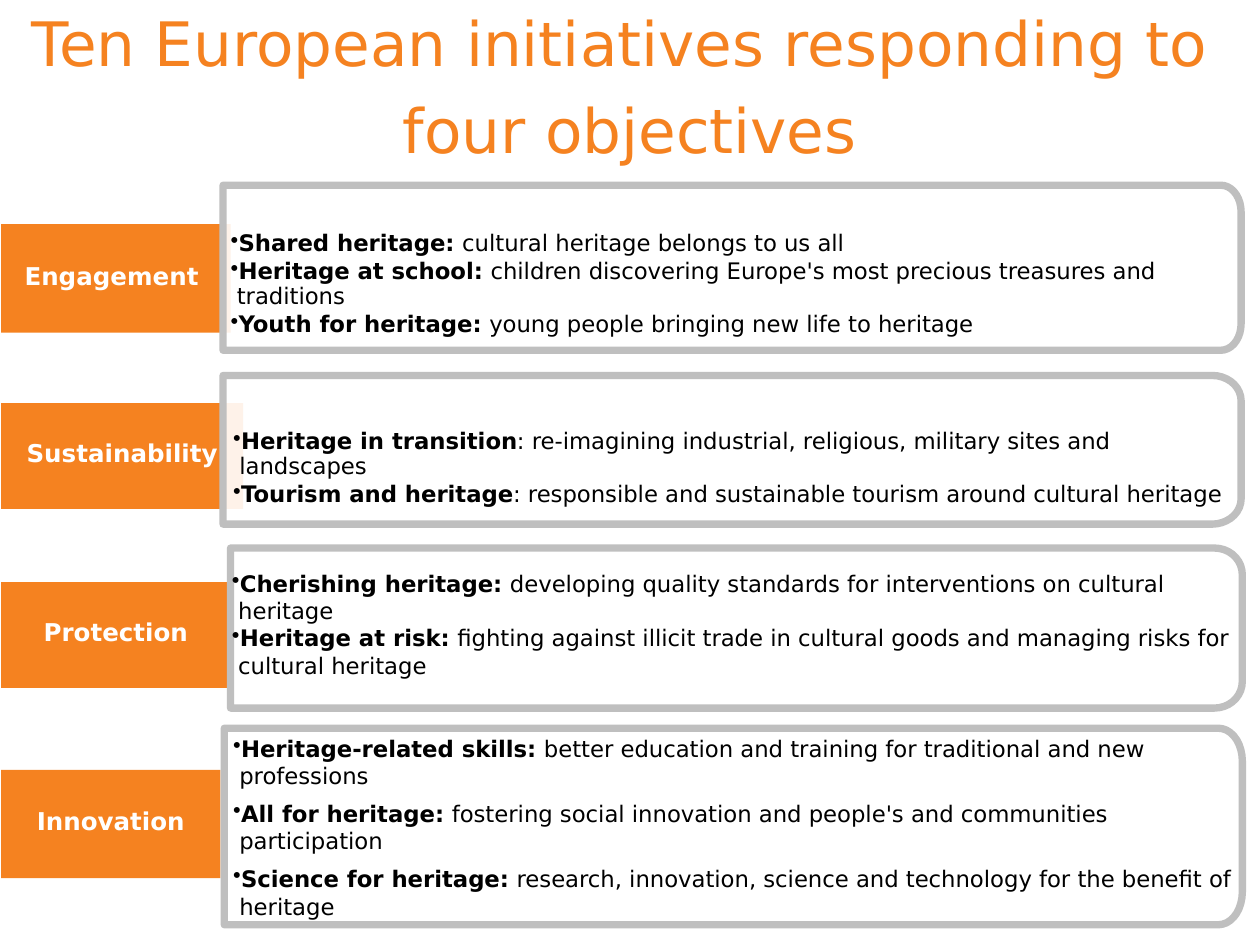
import math
from lxml import etree
from pptx import Presentation
from pptx import util as u
from pptx.dml.color import RGBColor
from pptx.enum import shapes, text
from pptx.oxml.ns import qn

COLORS = {"orange": "F58220", "grey": "BFBFBF", "white": "FFFFFF", "black": "000000"}
FONT = "DejaVu Sans"
COLS, ROWS = 100, 75

TITLE = ["Ten European initiatives responding to ", "four objectives"]

# Boxes are (left, top, width, height) in grid cells; insets are (side, top) in cells
OBJECTIVES = [
    dict(name="Engagement ", tag=(0.1, 17.8, 18.2, 8.6),
         panel=(17.7, 14.7, 80.8, 13.1), corner=(1.6, 2.1),
         body=(17.7, 13.1, 80.7, 16.2), inset=(0.6, 3.4), line=0.9, gap=2, middle=True,
         initiatives=[
             ("Shared heritage: ", "cultural heritage belongs to us all"),
             ("Heritage at school: ", "children discovering Europe's most precious "
              "treasures and traditions"),
             ("Youth for heritage: ", "young people bringing new life to heritage")]),
    dict(name="Sustainability", tag=(0.1, 32, 19.2, 8.4),
         panel=(17.7, 29.8, 80.8, 11.8), corner=(2.3, 2),
         body=(17.7, 28.6, 80.7, 14.2), inset=(0.8, 3.8), line=0.9, gap=2, middle=True,
         initiatives=[
             ("Heritage in transition", ": re-imagining industrial, religious, "
              "military sites and landscapes"),
             ("Tourism and heritage", ": responsible and sustainable tourism "
              "around cultural heritage")]),
    dict(name="Protection", tag=(0.1, 46.2, 18.2, 8.4),
         panel=(18.3, 43.5, 80.3, 12.7), corner=(2.2, 2.1),
         body=(17.9, 44.7, 80.9, 9.9), inset=(0.5, 0.5), line=1, gap=0, middle=False,
         initiatives=[
             ("Cherishing heritage: ", "developing quality standards for "
              "interventions on cultural heritage"),
             ("Heritage at risk: ", "fighting against illicit trade in cultural "
              "goods and managing risks for cultural heritage")]),
    dict(name="Innovation", tag=(0.1, 61.1, 17.4, 8.6),
         panel=(17.8, 57.8, 80.8, 15.6), corner=(1.9, 2.6),
         body=(17.8, 57.5, 80.7, 16.3), inset=(0.7, 0.7), line=1, gap=6, middle=True,
         initiatives=[
             ("Heritage-related skills: ", "better education and training for "
              "traditional and new professions"),
             ("All for heritage: ", "fostering social innovation and people's and "
              "communities participation"),
             ("Science for heritage: ", "research, innovation, science and "
              "technology for the benefit of heritage")]),
]


class Deck:
    def __init__(self):
        self.prs = Presentation()
        self.prs.slide_width, self.prs.slide_height = u.Inches(10), u.Inches(7.5)
        self.slide = self.prs.slides.add_slide(self.prs.slide_layouts[5])

    def x(self, cols):
        return round(self.prs.slide_width * cols / COLS)

    def y(self, rows):
        return round(self.prs.slide_height * rows / ROWS)

    def place(self, box):
        left, top, width, height = box
        return self.x(left), self.y(top), self.x(width), self.y(height)

    def frame(self, shape, side=0, top=0, bottom=0, middle=False):
        frame = shape.text_frame
        frame.word_wrap = True
        frame.auto_size = text.MSO_AUTO_SIZE.NONE
        frame.margin_left = frame.margin_right = self.x(side)
        frame.margin_top, frame.margin_bottom = self.y(top), self.y(bottom)
        frame.vertical_anchor = (text.MSO_ANCHOR.MIDDLE if middle
                                 else text.MSO_ANCHOR.TOP)
        return frame

    def paragraph(self, frame, index):
        return frame.paragraphs[0] if index == 0 else frame.add_paragraph()

    def run(self, paragraph, words, size, color, bold=False):
        run = paragraph.add_run()
        run.text = words
        run.font.name, run.font.size, run.font.bold = FONT, u.Pt(size), bold
        run.font.color.rgb = RGBColor.from_string(COLORS[color])

    def fill(self, shape, color):
        shape.shadow.inherit = False
        shape.fill.solid()
        shape.fill.fore_color.rgb = RGBColor.from_string(COLORS[color])

    def title(self, lines, box):
        heading = self.slide.shapes.title
        heading.left, heading.top, heading.width, heading.height = self.place(box)
        frame = self.frame(heading, top=0.4)
        for i, line in enumerate(lines):
            p = self.paragraph(frame, i)
            p.alignment = text.PP_ALIGN.CENTER
            p.space_before = u.Pt(8 if i else 0)
            self.run(p, line, 35, "orange")

    def tag(self, name, box):
        tag = self.slide.shapes.add_shape(shapes.MSO_SHAPE.RECTANGLE, *self.place(box))
        self.fill(tag, "orange")
        tag.line.fill.background()
        p = self.frame(tag, bottom=0.5, middle=True).paragraphs[0]
        p.alignment = text.PP_ALIGN.CENTER
        self.run(p, name, 14, "white", bold=True)

    def panel(self, box, corner):
        """Outline with both right-hand corners rounded."""
        left, top, width, height = box
        right, bottom = left + width, top + height
        rx, ry = corner
        turns = [math.radians(a) for a in range(0, 91, 10)]
        upper = [(right - rx + rx * math.sin(a), top + ry - ry * math.cos(a))
                 for a in turns]
        lower = [(px, top + bottom - py) for px, py in reversed(upper)]
        points = [(self.x(px), self.y(py))
                  for px, py in upper + lower + [(left, bottom)]]
        builder = self.slide.shapes.build_freeform(self.x(left), self.y(top))
        builder.add_line_segments(points, close=True)
        panel = builder.convert_to_shape()
        self.fill(panel, "white")
        tint = panel.fill._xPr.find(qn("a:solidFill"))[0]
        etree.SubElement(tint, qn("a:alpha"), val="90000")
        panel.line.color.rgb = RGBColor.from_string(COLORS["grey"])
        panel.line.width = u.Pt(4.2)

    def bullets(self, items, box, inset, line, gap, middle):
        side, top = inset
        body = self.slide.shapes.add_textbox(*self.place(box))
        frame = self.frame(body, side, top, side, middle)
        for i, (lead, detail) in enumerate(items):
            p = self.paragraph(frame, i)
            props = p._p.get_or_add_pPr()
            hang = u.Inches(0.05)
            props.set("marL", str(hang))
            props.set("indent", str(-hang))
            etree.SubElement(props, qn("a:buChar"), char="•")
            p.line_spacing = line
            p.space_before = u.Pt(gap if i else 0)
            self.run(p, lead, 13, "black", bold=True)
            self.run(p, detail, 13, "black")


def main():
    deck = Deck()
    deck.title(TITLE, (0, 0, COLS, 14.7))
    # Objective names, behind the panels
    for goal in OBJECTIVES:
        deck.tag(goal["name"], goal["tag"])
    # Initiatives for each objective
    for goal in OBJECTIVES:
        deck.panel(goal["panel"], goal["corner"])
        deck.bullets(goal["initiatives"], goal["body"], goal["inset"],
                     goal["line"], goal["gap"], goal["middle"])
    deck.prs.save("out.pptx")


if __name__ == "__main__":
    main()
